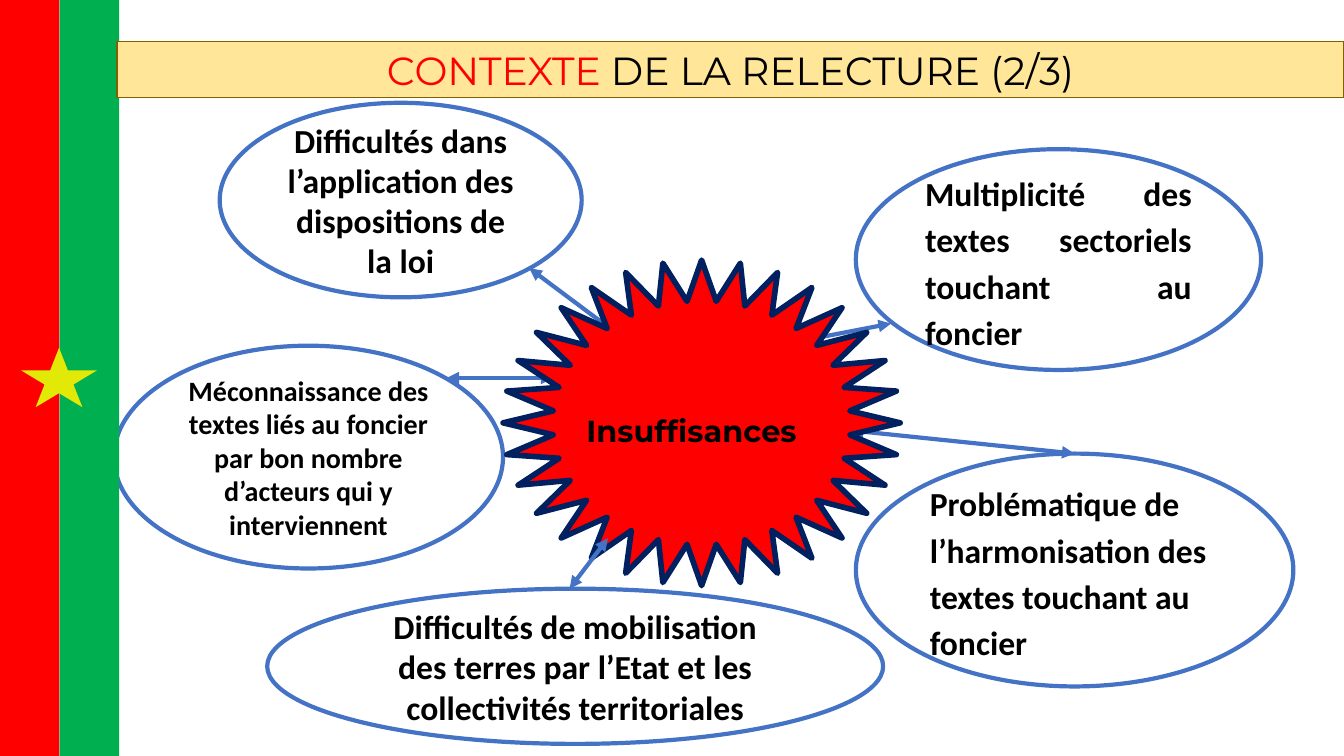
from lxml.etree import SubElement
from pptx import Presentation
from pptx.dml.color import RGBColor
from pptx.enum.shapes import MSO_CONNECTOR, MSO_SHAPE as SHAPE
from pptx.enum.text import MSO_ANCHOR, MSO_AUTO_SIZE, PP_ALIGN as ALIGN
from pptx.oxml.ns import qn
from pptx.util import Inches, Pt

BLUE, RED, BLACK = "4472C4", "FF0000", "000000"
TITLE = [("CONTEXTE", RED), (" DE LA RELECTURE (2/3)", BLACK)]
CENTRE = "Insuffisances"

# Positions and sizes are percentages of the slide: left, top, width, height
TITLE_BOX = (8.7, 5.47, 91.3, 7.47)
STAR_BOX = (37.43, 34.4, 29.55, 43.07)
CENTRE_BOX = (42.38, 46.13, 18.15, 21.6)
FLAG = [
    (SHAPE.RECTANGLE, (0, 0, 4.43, 100), RED),
    (SHAPE.RECTANGLE, (4.43, 0, 4.43, 100), "00B050"),
    (SHAPE.STAR_5_POINT, (1.58, 46, 5.63, 7.87), "E2E907"),
]
SPACED = dict(line_spacing=1.15, after=5)
CAUSES = {
    "application": ("Difficultés dans l’application des dispositions de la loi",
                    (16.35, 13.6, 26.93, 25.73), {}),
    "harmonisation": ("Problématique de l’harmonisation des textes touchant au foncier",
                      (63.68, 60, 32.55, 30.8), dict(align=ALIGN.LEFT, **SPACED)),
    "multiplicité": ("Multiplicité des textes sectoriels touchant au foncier",
                     (63.68, 19.73, 30.15, 29.2), dict(align=ALIGN.JUSTIFY, **SPACED)),
    "méconnaissance": ("Méconnaissance des textes liés au foncier par bon nombre "
                       "d’acteurs qui y interviennent",
                       (8.48, 45.73, 28.95, 29.47), dict(size=20)),
    "mobilisation": ("Difficultés de mobilisation des terres par l’Etat et les "
                     "collectivités territoriales",
                     (19.88, 77.87, 45.83, 20.53), {}),
}
# Start x, start y, end x, end y, and the cause whose top the arrow meets
ARROWS_BEHIND = [
    (58.5, 45.47, 66.3, 42.8, None),
    (63.3, 56.93, 79.95, 60, "harmonisation"),
    (33.23, 50, 41.18, 50, None),
    (39.38, 35.47, 45.6, 43.73, None),
]
ARROW_IN_FRONT = (42.38, 77.87, 45.23, 71.2, None)

prs = Presentation()
prs.slide_width, prs.slide_height = Inches(13.33), Inches(7.5)
slide = prs.slides.add_slide(prs.slide_layouts[5])


def rgb(value):
    return RGBColor.from_string(value)


def scale(values):
    """Turn alternating horizontal and vertical percentages into slide units."""
    sides = (prs.slide_width, prs.slide_height) * 2
    return [round(v * side / 100) for v, side in zip(values, sides)]


def paint(s, fill=None, line=None, width=0):
    if fill:
        s.fill.solid()
        s.fill.fore_color.rgb = rgb(fill)
    else:
        s.fill.background()
    if line:
        s.line.color.rgb = rgb(line)
        s.line.width = Pt(width)
    else:
        s.line.fill.background()


def add_shape(kind, box, parent=slide, **style):
    s = parent.shapes.add_shape(kind, *scale(box))
    s.shadow.inherit = False
    paint(s, **style)
    return s


def write(s, runs, size=24, font="Calibri", bold=True, align=ALIGN.CENTER,
          line_spacing=1.0, after=0):
    """Fill a shape with one paragraph; runs is a string or (text, colour) pairs."""
    tf = s.text_frame
    tf.word_wrap = True
    tf.auto_size = MSO_AUTO_SIZE.NONE
    tf.vertical_anchor = MSO_ANCHOR.MIDDLE
    p = tf.paragraphs[0]
    p.alignment, p.line_spacing = align, line_spacing
    p.space_before, p.space_after = Pt(0), Pt(after)
    for text, colour in [(runs, BLACK)] if isinstance(runs, str) else runs:
        r = p.add_run()
        r.text = text
        r.font.name, r.font.size, r.font.bold = font, Pt(size), bold
        r.font.color.rgb = rgb(colour)


def add_arrow(x1, y1, x2, y2, target):
    """Draw a double-headed arrow, joined to the top of its target if any."""
    c = slide.shapes.add_connector(MSO_CONNECTOR.STRAIGHT, *scale((x1, y1, x2, y2)))
    if target:
        c.end_connect(ovals[target], 0)
    c.line.color.rgb = rgb(BLUE)
    c.line.width = Pt(3)
    ln = c.line._get_or_add_ln()
    for end in ("a:headEnd", "a:tailEnd"):
        SubElement(ln, qn(end), type="triangle")
    SubElement(c._element.spPr, qn("a:effectLst"))


ovals = {}
for name, (text, box, style) in CAUSES.items():
    ovals[name] = add_shape(SHAPE.OVAL, box, line=BLUE, width=3)
    write(ovals[name], text, **style)

for arrow in ARROWS_BEHIND:
    add_arrow(*arrow)
add_shape(SHAPE.STAR_32_POINT, STAR_BOX, fill=RED, line="002060", width=4)
write(slide.shapes.add_textbox(*scale(CENTRE_BOX)), CENTRE, size=21.7, font="Montserrat")
add_arrow(*ARROW_IN_FRONT)

flag = slide.shapes.add_group_shape()
for kind, box, colour in FLAG:
    add_shape(kind, box, parent=flag, fill=colour)

title = slide.shapes.title
title.left, title.top, title.width, title.height = scale(TITLE_BOX)
paint(title, fill="FFE699", line="806000", width=1)
write(title, TITLE, size=28, font="Montserrat", bold=False)
slide.shapes._spTree.append(title._element)  # bring the title in front of the flag

prs.save("out.pptx")
